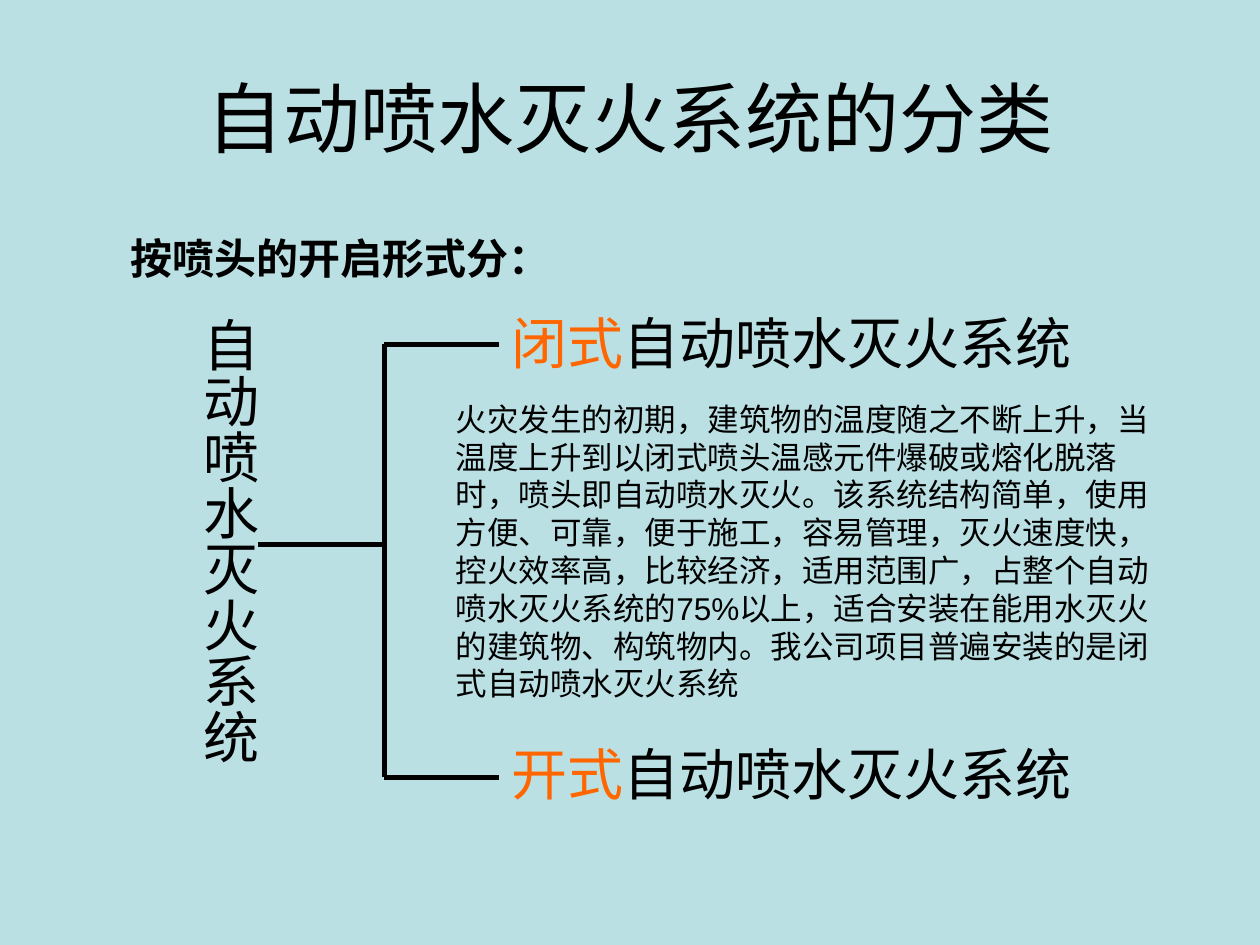
"""Build a slide that classifies automatic sprinkler systems by nozzle type."""
import pptx
import pptx.dml.color
import pptx.enum.shapes
import pptx.enum.text
import pptx.oxml.ns
import pptx.util
from lxml import etree

Pt = pptx.util.Pt
BACKGROUND = pptx.dml.color.RGBColor(0xBB, 0xE0, 0xE3)
BLACK = pptx.dml.color.RGBColor(0, 0, 0)
ORANGE = pptx.dml.color.RGBColor(0xFF, 0x66, 0)

TITLE = "自动喷水灭火系统的分类"
HEADING = "按喷头的开启形式分："
SYSTEM = "自动喷水灭火系统"
BRANCHES = [("闭式", 172.6, 196.7), ("开式", 419, 444.2)]
DESCRIPTION = (
    "火灾发生的初期，建筑物的温度随之不断上升，当温度上升到以闭式喷头温感元件爆破或熔化脱落时，"
    "喷头即自动喷水灭火。该系统结构简单，使用方便、可靠，便于施工，容易管理，灭火速度快，"
    "控火效率高，比较经济，适用范围广，占整个自动喷水灭火系统的75%以上，"
    "适合安装在能用水灭火的建筑物、构筑物内。我公司项目普遍安装的是闭式自动喷水灭火系统"
)

STEM_LEFT, TRUNK_X, BRANCH_LEFT, STEM_Y = 147.6, 219.6, 285.2, 311
BRANCH_WIDTH, BRANCH_HEIGHT = 384, 45.4


def add_text(slide, box, runs, size, bold=False):
    """Add a wrapped text box made of (text, colour) runs."""
    shape = slide.shapes.add_textbox(*map(Pt, box))
    shape.text_frame.word_wrap = True
    paragraph = shape.text_frame.paragraphs[0]
    paragraph.font.name = "Arial"
    paragraph.font.size = Pt(size)
    paragraph.font.bold = bold
    paragraph._p.get_or_add_pPr().set("hangingPunct", "0")
    for text, color in runs:
        run = paragraph.add_run()
        run.text = text
        run.font.color.rgb = color
    return shape


def add_line(slide, *ends):
    """Add a plain black line between two points."""
    line = slide.shapes.add_connector(
        pptx.enum.shapes.MSO_CONNECTOR.STRAIGHT, *map(Pt, ends))
    line.line.color.rgb = BLACK
    line.line.width = Pt(3)
    etree.SubElement(line._element.spPr, pptx.oxml.ns.qn("a:effectLst"))


def main():
    """Create and save the presentation."""
    presentation = pptx.Presentation()
    presentation.slide_width, presentation.slide_height = Pt(720), Pt(540)
    slide = presentation.slides.add_slide(presentation.slide_layouts[5])
    slide.background.fill.solid()
    slide.background.fill.fore_color.rgb = BACKGROUND

    title = slide.shapes.title
    title.left, title.top, title.width, title.height = map(Pt, (36, 21.6, 648, 90))
    title.text_frame.text = TITLE
    title.text_frame.vertical_anchor = pptx.enum.text.MSO_ANCHOR.MIDDLE
    paragraph = title.text_frame.paragraphs[0]
    paragraph.alignment = pptx.enum.text.PP_ALIGN.CENTER
    paragraph.font.name = "Noto Sans CJK SC"
    paragraph.font.size = Pt(44)
    paragraph.font.color.rgb = BLACK

    add_text(slide, (67.7, 129.6, 292.3, 36), [(HEADING, BLACK)], 24, bold=True)
    root = add_text(slide, (100.8, 174.2, 53.3, 293.8), [(SYSTEM, BLACK)], 32)
    root.text_frame._txBody.bodyPr.set("vert", "eaVert")

    add_line(slide, STEM_LEFT, STEM_Y, TRUNK_X, STEM_Y)
    for kind, top, line_y in BRANCHES:
        box = (BRANCH_LEFT, top, BRANCH_WIDTH, BRANCH_HEIGHT)
        add_text(slide, box, [(kind, ORANGE), (SYSTEM, BLACK)], 32)
        add_line(slide, TRUNK_X, STEM_Y, TRUNK_X, line_y)
        add_line(slide, TRUNK_X, line_y, BRANCH_LEFT, line_y)

    add_text(slide, (253.4, 224.9, 421.9, 181.4), [(DESCRIPTION, BLACK)], 18)
    presentation.save("out.pptx")


if __name__ == "__main__":
    main()
